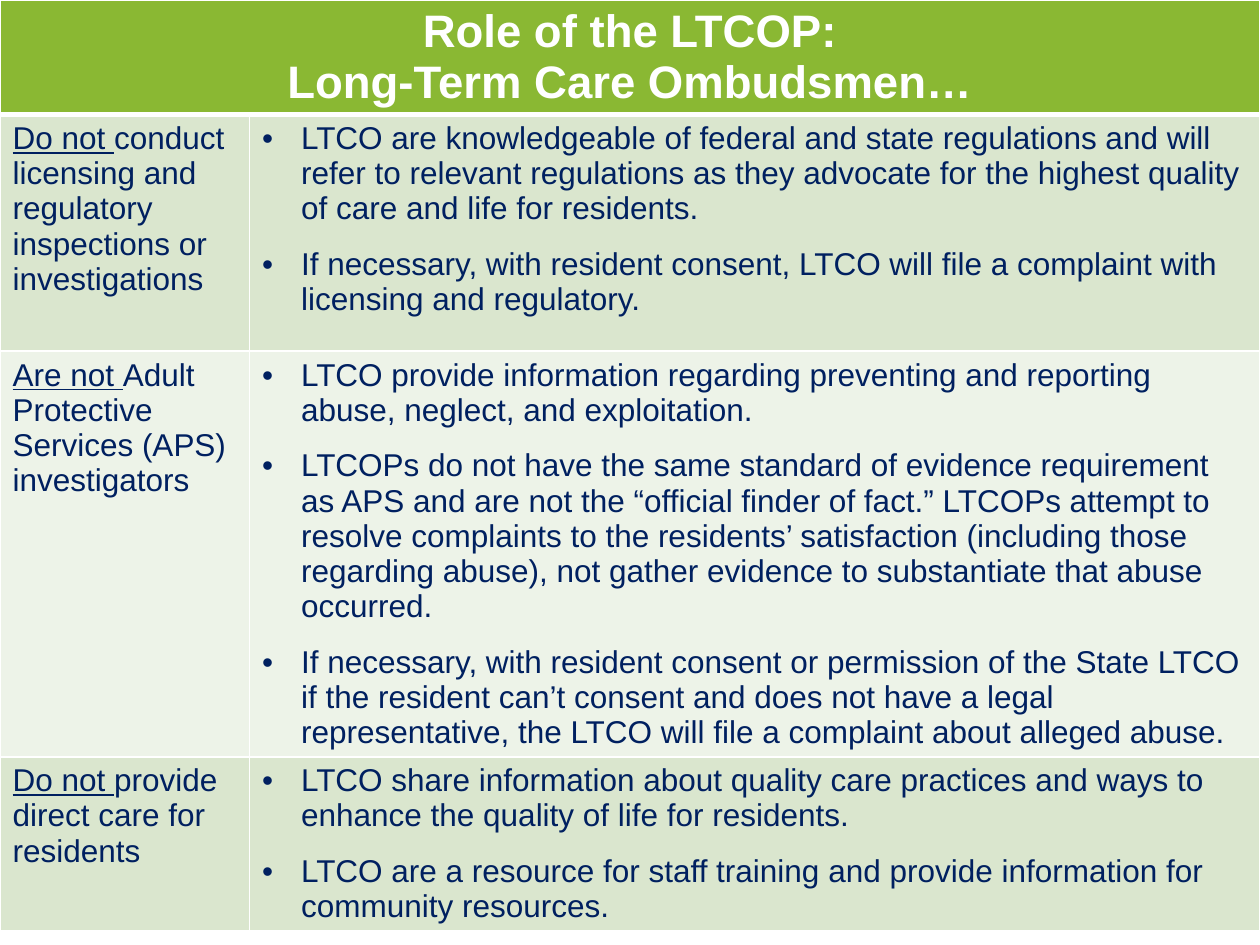
from lxml.etree import SubElement
from pptx import Presentation
from pptx.dml.color import RGBColor
from pptx.enum.text import PP_ALIGN as Align
from pptx.oxml.ns import qn
from pptx.util import Inches, Pt

COLORS = {"header": "8AB833", "band": "DAE6CE", "light": "EDF3E8",
          "text": "002060", "white": "FFFFFF"}
HEADER_FONT = {"name": "Arial", "size": Pt(26), "bold": True}
BODY_FONT = {"name": "Arial", "size": Pt(18), "bold": False}
COLUMN_WIDTHS = [1.98, 8.02]
ROW_HEIGHTS = [0.89, 1.88, 2.83, 1.31]
BULLET_INDENT = Inches(0.31)
BULLET_GAP = Pt(11.5)

HEADING = ["Role of the LTCOP:", "Long-Term Care Ombudsmen…"]
ROLES = [
    ("Do not ", "conduct licensing and regulatory inspections or investigations", [
        "LTCO are knowledgeable of federal and state regulations and will refer to "
        "relevant regulations as they advocate for the highest quality of care and "
        "life for residents.",
        "If necessary, with resident consent, LTCO will file a complaint with "
        "licensing and regulatory.",
    ]),
    ("Are not ", "Adult Protective Services (APS) investigators", [
        "LTCO provide information regarding preventing and reporting abuse, neglect, "
        "and exploitation.",
        "LTCOPs do not have the same standard of evidence requirement as APS and are "
        "not the “official finder of fact.” LTCOPs attempt to resolve complaints to "
        "the residents’ satisfaction (including those regarding abuse), not gather "
        "evidence to substantiate that abuse occurred.",
        "If necessary, with resident consent or permission of the State LTCO if the "
        "resident can’t consent and does not have a legal representative, the LTCO "
        "will file a complaint about alleged abuse.",
    ]),
    ("Do not ", "provide direct care for residents", [
        "LTCO share information about quality care practices and ways to enhance the "
        "quality of life for residents.",
        "LTCO are a resource for staff training and provide information for "
        "community resources.",
    ]),
]


def add_span(para, text, font, color, underline=False):
    span = para.add_run()
    span.text = text
    for name, value in font.items():
        setattr(span.font, name, value)
    span.font.underline = underline
    span.font.color.rgb = RGBColor.from_string(COLORS[color])


def add_paragraphs(cell, count):
    """Return count paragraphs, the first being the one the cell already has."""
    frame = cell.text_frame
    return [frame.paragraphs[0]] + [frame.add_paragraph() for _ in range(count - 1)]


def set_bullet(para):
    props = para._p.get_or_add_pPr()
    props.set("marL", str(BULLET_INDENT))
    props.set("indent", str(-BULLET_INDENT))
    SubElement(props, qn("a:buFont"), typeface="Arial")
    SubElement(props, qn("a:buChar"), char="•")


def style_cell(cell, fill, top=1, bottom=1):
    """Give the cell white borders, with widths in points, and a solid fill."""
    props = cell._tc.get_or_add_tcPr()
    for side, width in {"L": 1, "R": 1, "T": top, "B": bottom}.items():
        line = SubElement(props, qn(f"a:ln{side}"), w=str(Pt(width)))
        solid = SubElement(line, qn("a:solidFill"))
        SubElement(solid, qn("a:srgbClr"), val=COLORS["white"])
    cell.fill.solid()
    cell.fill.fore_color.rgb = RGBColor.from_string(COLORS[fill])


def fill_header(table):
    first, last = table.cell(0, 0), table.cell(0, 1)
    first.merge(last)
    for cell in (first, last):
        style_cell(cell, "header", bottom=3)
    for para, text in zip(add_paragraphs(first, len(HEADING)), HEADING):
        para.alignment = Align.CENTER
        add_span(para, text, HEADER_FONT, "white")


def fill_role(table, row, limit, duty, points):
    role_cell, points_cell = table.cell(row, 0), table.cell(row, 1)
    for cell in (role_cell, points_cell):
        style_cell(cell, "band" if row % 2 else "light", top=3 if row == 1 else 1)
    para = role_cell.text_frame.paragraphs[0]
    add_span(para, limit, BODY_FONT, "text", underline=True)
    add_span(para, duty, BODY_FONT, "text")
    for index, para in enumerate(add_paragraphs(points_cell, len(points))):
        if index:
            para.space_before = BULLET_GAP
        set_bullet(para)
        add_span(para, points[index], BODY_FONT, "text")


def add_role_table(page):
    table = page.shapes.add_table(
        len(ROW_HEIGHTS), len(COLUMN_WIDTHS), Inches(0), Inches(0),
        Inches(sum(COLUMN_WIDTHS)), Inches(sum(ROW_HEIGHTS))).table
    for column, width in zip(table.columns, COLUMN_WIDTHS):
        column.width = Inches(width)
    for row, height in zip(table.rows, ROW_HEIGHTS):
        row.height = Inches(height)
    fill_header(table)
    for row, role in enumerate(ROLES, start=1):
        fill_role(table, row, *role)


def main():
    deck = Presentation()
    deck.slide_width, deck.slide_height = Inches(10), Inches(7.5)
    blank_layout = deck.slide_layouts[6]
    add_role_table(deck.slides.add_slide(blank_layout))
    deck.save("out.pptx")


if __name__ == "__main__":
    main()
